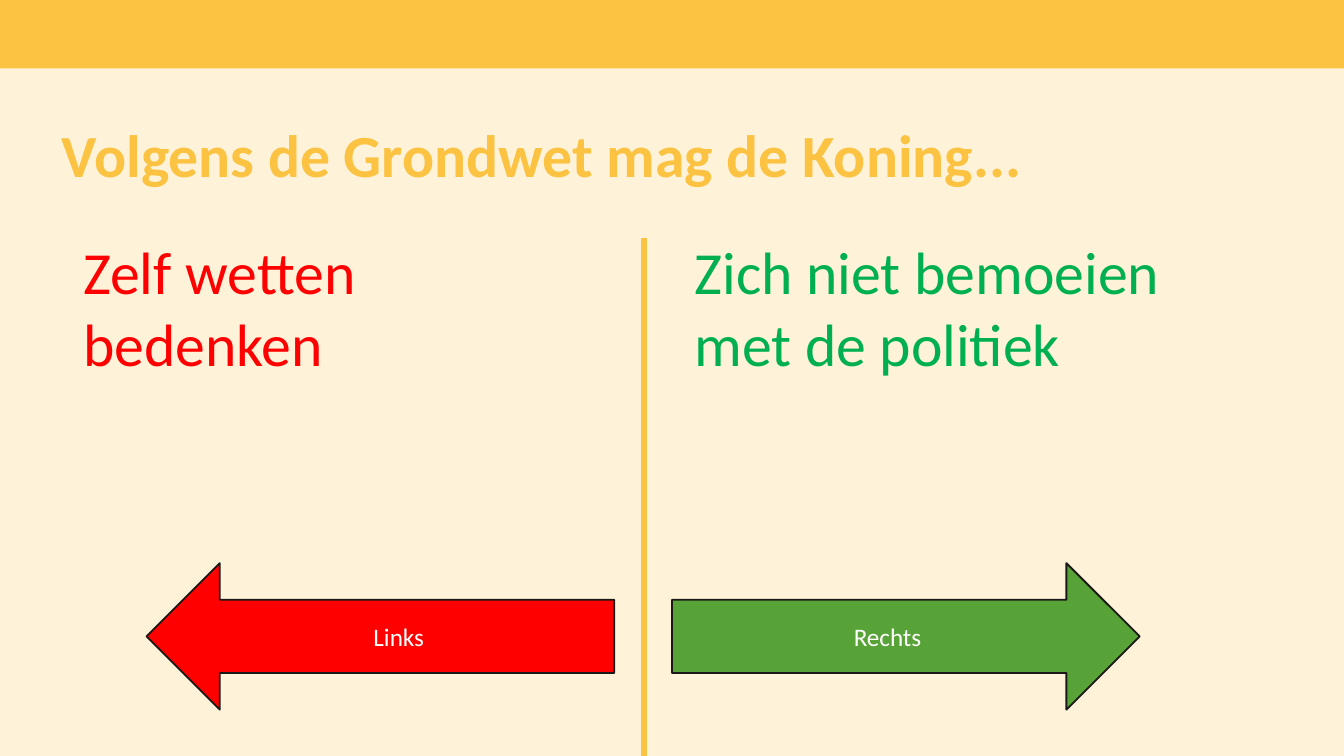
"""Build a quiz slide with two opposing answers about the King's role."""
from lxml import etree
from pptx import Presentation
from pptx.dml.color import RGBColor
from pptx.enum.shapes import MSO_CONNECTOR, MSO_SHAPE
from pptx.enum.text import MSO_ANCHOR, PP_ALIGN
from pptx.oxml.ns import qn
from pptx.util import Inches, Pt

RECTANGLE = MSO_SHAPE.RECTANGLE
LEFT_ARROW = MSO_SHAPE.LEFT_ARROW
RIGHT_ARROW = MSO_SHAPE.RIGHT_ARROW
STRAIGHT = MSO_CONNECTOR.STRAIGHT
MIDDLE = MSO_ANCHOR.MIDDLE
CENTER = PP_ALIGN.CENTER

CREAM = RGBColor(0xFE, 0xF3, 0xD9)
YELLOW = RGBColor(0xFC, 0xC2, 0x41)
RED = RGBColor(0xFF, 0x00, 0x00)
TEXT_GREEN = RGBColor(0x00, 0xB0, 0x50)
ARROW_GREEN = RGBColor(0x58, 0xA3, 0x37)
BLACK = RGBColor(0x1A, 0x19, 0x18)
WHITE = RGBColor(0xFF, 0xFF, 0xFF)
FONT = "Calibri"


def add_run(paragraph, text, size, color, bold=False):
    run = paragraph.add_run()
    run.text = text
    run.font.name = FONT
    run.font.size = Pt(size)
    run.font.bold = bold
    run.font.color.rgb = color


def add_text(left, top, width, height):
    frame = slide.shapes.add_textbox(
        Inches(left), Inches(top), Inches(width), Inches(height)).text_frame
    frame.word_wrap = True
    return frame


prs = Presentation()
prs.slide_width = Inches(10)
prs.slide_height = Inches(10 * 9 / 16)
slide = prs.slides.add_slide(prs.slide_layouts[6])
slide.background.fill.solid()
slide.background.fill.fore_color.rgb = CREAM

banner = slide.shapes.add_shape(RECTANGLE, 0, 0, prs.slide_width, Inches(0.51))
banner.shadow.inherit = False
banner.fill.solid()
banner.fill.fore_color.rgb = YELLOW
banner.line.fill.background()

title = add_text(0.46, 0.86, 7.29, 0.98)
title.margin_left = title.margin_right = title.margin_bottom = 0
title.paragraphs[0].line_spacing = Pt(36)
add_run(title.paragraphs[0], "Volgens de Grondwet mag de Koning...", 32, YELLOW, bold=True)

divider = slide.shapes.add_connector(
    STRAIGHT, Inches(4.79), Inches(1.77), Inches(4.79), prs.slide_height)
divider.line.color.rgb = YELLOW
divider.line.width = Pt(3)
etree.SubElement(divider._element.spPr, qn("a:effectLst"))

answers = [
    ("Zelf wetten bedenken", 0.52, 2.95, RED, "Links", LEFT_ARROW, 1.09, RED),
    ("Zich niet bemoeien met de politiek", 5.07, 3.84, TEXT_GREEN,
     "Rechts", RIGHT_ARROW, 5, ARROW_GREEN),
]
for answer, left, width, color, direction, arrow_kind, arrow_left, arrow_color in answers:
    statement = add_text(left, 1.7, width, 1.18)
    add_run(statement.paragraphs[0], answer, 32, color)

    arrow = slide.shapes.add_shape(
        arrow_kind, Inches(arrow_left), Inches(4.19), Inches(3.48), Inches(1.09))
    arrow.shadow.inherit = False
    arrow.fill.solid()
    arrow.fill.fore_color.rgb = arrow_color
    arrow.line.color.rgb = BLACK
    arrow.line.width = Pt(1)
    arrow.text_frame.vertical_anchor = MIDDLE
    label = arrow.text_frame.paragraphs[0]
    label.alignment = CENTER
    add_run(label, direction, 13.5, WHITE)

prs.save("out.pptx")
